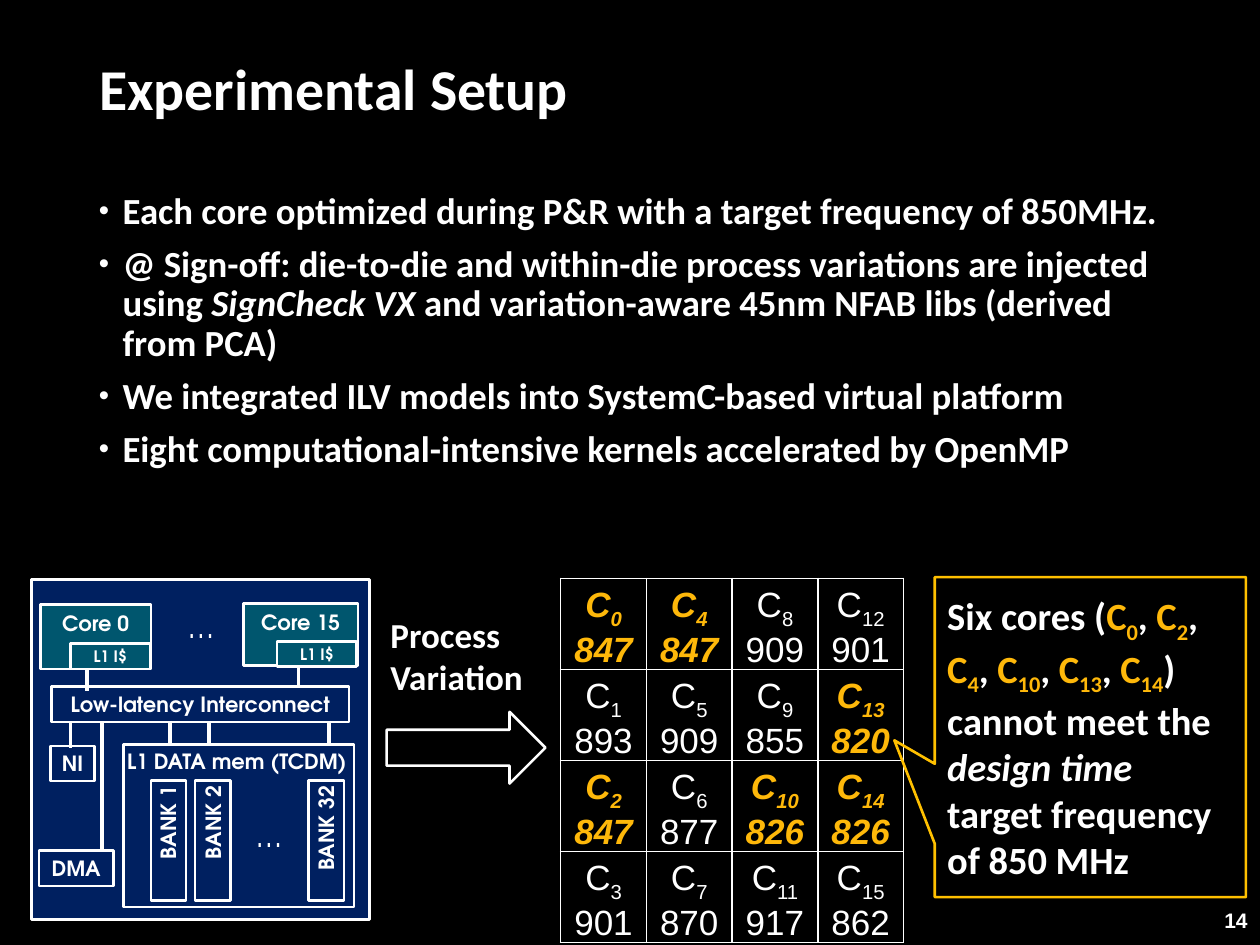
from dataclasses import dataclass

from lxml.etree import SubElement
from pptx import Presentation
from pptx.dml.color import RGBColor
from pptx.enum.shapes import MSO_CONNECTOR, MSO_SHAPE
from pptx.enum.text import MSO_ANCHOR, MSO_AUTO_SIZE, PP_ALIGN
from pptx.oxml.ns import qn
from pptx.util import Pt


@dataclass(frozen=True)
class Theme:
    back: str = "000000"
    text: str = "FFFFFF"
    slow: str = "FEB80A"
    callout: str = "FFC000"
    chip: str = "002060"
    core: str = "00566E"
    body_font: str = "Calibri"
    data_font: str = "Arial"
    chip_font: str = "TeX Gyre Adventor"
    title: int = 33
    callout_size: int = 22
    body: int = 21
    data: int = 20
    dots: int = 18
    label: int = 12
    small: int = 9


T = Theme()
TARGET = 850
FREQS = [847, 893, 847, 901, 847, 909, 877, 870,
         909, 855, 826, 917, 901, 820, 826, 862]
SLOW = [n for n, freq in enumerate(FREQS) if freq < TARGET]
BULLETS = [
    [("Each core optimized during P&R with a target frequency of 850MHz.", False)],
    [("@ Sign-off: die-to-die and within-die process variations are injected using ", False),
     ("SignCheck VX", True),
     (" and variation-aware 45nm NFAB libs (derived from PCA)", False)],
    [("We integrated ILV models into SystemC-based virtual platform", False)],
    [("Eight computational-intensive kernels accelerated by OpenMP", False)],
]


def rgb(color):
    return RGBColor.from_string(color)


def style(r, size, font=T.body_font, color=T.text, bold=True, italic=False):
    r.font.size = Pt(size)
    r.font.name = font
    r.font.color.rgb = rgb(color)
    r.font.bold = bold
    r.font.italic = italic


def add_run(p, text, size, sub=False, **look):
    r = p.add_run()
    r.text = text
    style(r, size, **look)
    if sub:
        r._r.get_or_add_rPr().set("baseline", "-25000")


def add_core_name(p, n, size, **look):
    add_run(p, "C", size, **look)
    add_run(p, str(n), size, sub=True, **look)


def set_text(tf, text, size, align=PP_ALIGN.LEFT, anchor=MSO_ANCHOR.TOP, **look):
    tf.text = text
    tf.word_wrap = True
    tf.vertical_anchor = anchor
    p = tf.paragraphs[0]
    p.alignment = align
    style(p.runs[0], size, **look)


def add_text(shapes, box, text, size, **look):
    sp = shapes.add_textbox(*map(Pt, box))
    set_text(sp.text_frame, text, size, **look)


def add_outline(shapes, kind, box, fill=None, line=T.text):
    sp = shapes.add_shape(kind, *map(Pt, box))
    sp.shadow.inherit = False
    if fill:
        sp.fill.solid()
        sp.fill.fore_color.rgb = rgb(fill)
    else:
        sp.fill.background()
    sp.line.color.rgb = rgb(line)
    sp.line.width = Pt(1.5)
    return sp


def add_block(shapes, box, text, size=T.label, fill=None,
              anchor=MSO_ANCHOR.MIDDLE, align=PP_ALIGN.CENTER):
    sp = add_outline(shapes, MSO_SHAPE.RECTANGLE, box, fill)
    tf = sp.text_frame
    set_text(tf, text, size, align, anchor, font=T.chip_font)
    tf.margin_left = tf.margin_right = Pt(3)
    return sp


def add_link(shapes, x, top, bottom):
    ln = shapes.add_connector(MSO_CONNECTOR.STRAIGHT, Pt(x), Pt(top), Pt(x), Pt(bottom))
    ln.line.color.rgb = rgb(T.text)
    ln.line.width = Pt(2.25)
    SubElement(ln._element.spPr, qn("a:effectLst"))


def add_title(s, text):
    sp = s.shapes.title
    sp.left, sp.top, sp.width, sp.height = map(Pt, (49.5, 19.5, 621, 66))
    set_text(sp.text_frame, text, T.title, anchor=MSO_ANCHOR.MIDDLE)
    sp.text_frame.auto_size = MSO_AUTO_SIZE.NONE
    sp.text_frame.paragraphs[0].line_spacing = 0.9


def add_bullets(s):
    tf = s.shapes.add_textbox(Pt(49.5), Pt(106.5), Pt(621), Pt(200)).text_frame
    tf.word_wrap = True
    for i, parts in enumerate(BULLETS):
        p = tf.add_paragraph() if i else tf.paragraphs[0]
        p.line_spacing = 0.9
        p.space_before = Pt(7.5)
        pPr = p._p.get_or_add_pPr()
        pPr.set("marL", str(Pt(13.5)))
        pPr.set("indent", str(-Pt(13.5)))
        SubElement(pPr, qn("a:buSzPct"), val="80000")
        SubElement(pPr, qn("a:buFont"), typeface=T.data_font)
        SubElement(pPr, qn("a:buChar"), char="•")
        for text, italic in parts:
            add_run(p, text, T.body, italic=italic)


def add_chip(s):
    chip = s.shapes.add_group_shape().shapes
    add_outline(chip, MSO_SHAPE.RECTANGLE, (18, 331.2, 193, 194.4), T.chip)
    for x, top, bottom in ((49.7, 380, 394.6), (170.6, 379, 393), (40.3, 413.3, 427.7),
                           (58.3, 412.6, 486), (97.2, 412, 426), (119.5, 412, 426),
                           (187.9, 412, 426)):
        add_link(chip, x, top, bottom)
    for name, box, cache in (("Core 0", (23, 345.6, 63.4, 36.7), (40.3, 367.9)),
                             ("Core 15", (139, 344.9, 65.5, 35.3), (158.4, 366.5))):
        add_block(chip, box, name, fill=T.core, anchor=MSO_ANCHOR.TOP)
        add_block(chip, (*cache, 45.4, 14.4), "L1 I$", T.small, T.core)
    add_block(chip, (29.5, 392.4, 170, 20.2), "Low-latency Interconnect")
    add_block(chip, (28.8, 426.2, 25.2, 20.2), "NI")
    add_block(chip, (22.3, 486, 42.5, 20.2), "DMA")
    add_outline(chip, MSO_SHAPE.RECTANGLE, (70.6, 425.5, 131.8, 92.9))
    add_text(chip, (65.5, 424, 144.7, 21.6), "L1 DATA mem (TCDM)", T.label, font=T.chip_font)
    for n, left in ((1, 61.9), (2, 87.1), (32, 152)):
        sp = add_block(chip, (left, 470.2, 68.8, 20.2), f"BANK {n}", align=PP_ALIGN.RIGHT)
        sp.rotation = 270
    for left, top in ((92.2, 343.4), (131, 463)):
        add_text(chip, (left, top, 45.4, 28.8), "…", T.dots, align=PP_ALIGN.CENTER,
                 font=T.chip_font, bold=False)


def add_borders(cell):
    tcPr = cell._tc.get_or_add_tcPr()
    for side in ("lnL", "lnR", "lnT", "lnB"):
        ln = SubElement(tcPr, qn(f"a:{side}"), w=str(Pt(1)))
        SubElement(SubElement(ln, qn("a:solidFill")), qn("a:srgbClr"), val=T.text)


def add_core_table(s):
    frame = s.shapes.add_table(4, 4, Pt(320.4), Pt(330.5), Pt(196), Pt(208))
    tbl = frame.table
    tbl.first_row = tbl.horz_banding = False
    for n, freq in enumerate(FREQS):
        cell = tbl.cell(n % 4, n // 4)
        add_borders(cell)
        cell.fill.background()
        cell.vertical_anchor = MSO_ANCHOR.BOTTOM
        cell.margin_left = cell.margin_right = cell.margin_top = Pt(0.7)
        cell.margin_bottom = 0
        slow = n in SLOW
        look = dict(font=T.data_font, color=T.slow if slow else T.text,
                    bold=slow, italic=slow)
        name, value = cell.text_frame.paragraphs[0], cell.text_frame.add_paragraph()
        name.alignment = value.alignment = PP_ALIGN.CENTER
        add_core_name(name, n, T.data, **look)
        add_run(value, str(freq), T.data, **look)


def add_callout(s):
    sp = add_outline(s.shapes, MSO_SHAPE.RECTANGULAR_CALLOUT,
                     (534.2, 329.8, 177.8, 182.9), line=T.callout)
    sp.adjustments[0], sp.adjustments[1] = -0.63, 0.01
    tf = sp.text_frame
    tf.word_wrap = True
    tf.vertical_anchor = MSO_ANCHOR.MIDDLE
    p = tf.paragraphs[0]
    p.alignment = PP_ALIGN.LEFT
    add_run(p, "Six cores (", T.callout_size)
    for i, n in enumerate(SLOW):
        if i:
            add_run(p, ", ", T.callout_size)
        add_core_name(p, n, T.callout_size, color=T.slow)
    add_run(p, ") cannot meet the ", T.callout_size)
    add_run(p, "design time ", T.callout_size, italic=True)
    add_run(p, f"target frequency of {TARGET} MHz", T.callout_size)


def main():
    prs = Presentation()
    prs.slide_width, prs.slide_height = Pt(720), Pt(540)
    s = prs.slides.add_slide(prs.slide_layouts[5])
    s.background.fill.solid()
    s.background.fill.fore_color.rgb = rgb(T.back)
    add_title(s, "Experimental Setup")
    add_bullets(s)
    add_text(s.shapes, (558, 511.2, 162, 28.8), "14", T.label, align=PP_ALIGN.RIGHT,
             anchor=MSO_ANCHOR.MIDDLE, font=T.data_font)
    add_chip(s)
    add_core_table(s)
    add_outline(s.shapes, MSO_SHAPE.RIGHT_ARROW, (221, 406.8, 90.7, 41))
    add_text(s.shapes, (216, 347, 121.7, 55.4), "Process Variation", T.data)
    add_callout(s)
    prs.save("out.pptx")


if __name__ == "__main__":
    main()
